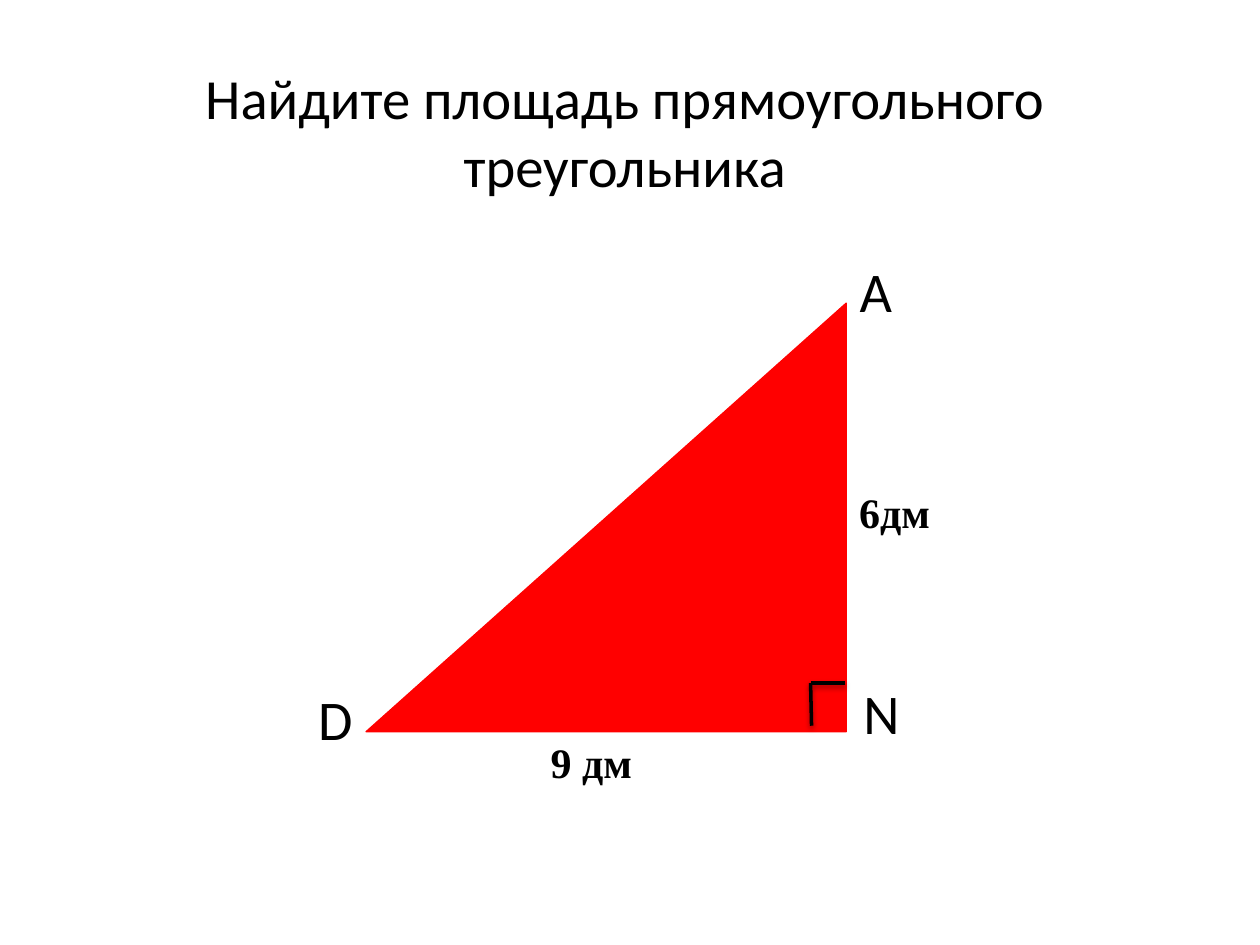
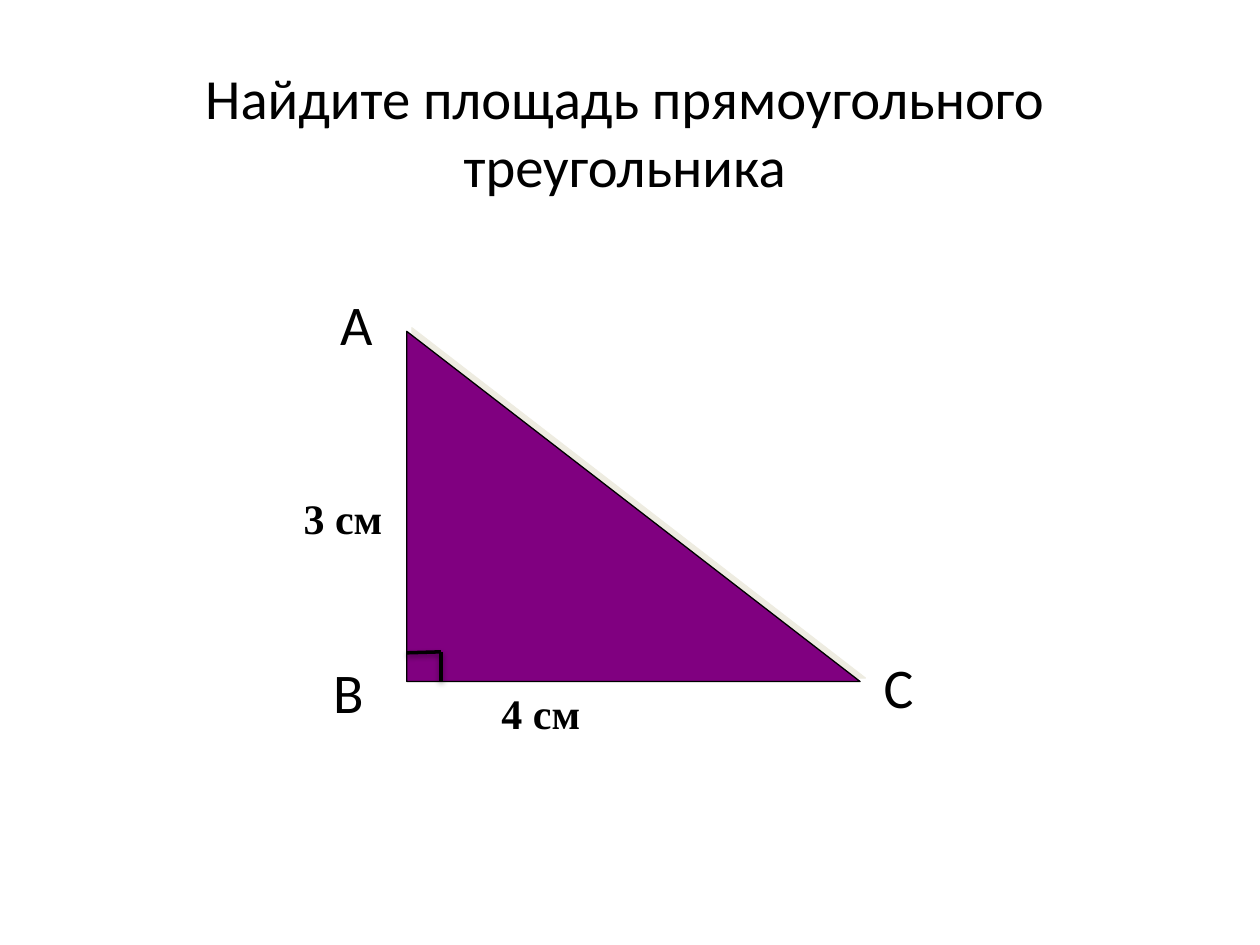
import itertools

import pptx
import pptx.dml.color
import pptx.enum.shapes
import pptx.enum.text
import pptx.oxml
import pptx.oxml.ns
import pptx.util

Cm = pptx.util.Cm
Pt = pptx.util.Pt
PP_ALIGN = pptx.enum.text.PP_ALIGN
AUTO_SIZE = pptx.enum.text.MSO_AUTO_SIZE

COLORS = {
    "ink": "000000",
    "red": "FF0000",
    "purple": "800080",
    "cream": "EEECE1",
}
VERTEX_FONT = "Calibri"
LENGTH_FONT = "Times New Roman"
TITLE_ONLY = 5
TASK = "Найдите площадь прямоугольного треугольника"


def rgb(name):
    return pptx.dml.color.RGBColor.from_string(COLORS[name])


def format_text(frame, font_name, size, align, bold=False):
    for paragraph in frame.paragraphs:
        paragraph.alignment = align
        for run in paragraph.runs:
            run.font.name = font_name
            run.font.size = Pt(size)
            run.font.bold = bold
            run.font.color.rgb = rgb("ink")


def add_shadow(shape, color, opacity, blur, distance, angle):
    """Give the shape an outer shadow: opacity in percent, blur and distance in points."""
    properties = shape._element.spPr
    for effects in properties.findall(pptx.oxml.ns.qn("a:effectLst")):
        properties.remove(effects)
    properties.append(pptx.oxml.parse_xml(
        f'<a:effectLst {pptx.oxml.ns.nsdecls("a")}>'
        f'<a:outerShdw blurRad="{Pt(blur)}" dist="{Pt(distance)}" '
        f'dir="{angle * 60000}" algn="ctr" rotWithShape="0">'
        f'<a:srgbClr val="{COLORS[color]}"><a:alpha val="{opacity * 1000}"/></a:srgbClr>'
        f'</a:outerShdw></a:effectLst>'))


def add_task_slide(deck):
    """Add a slide titled with the task and return the group that holds its figure."""
    slide = deck.slides.add_slide(deck.slide_layouts[TITLE_ONLY])
    title = slide.shapes.title
    title.left, title.top, title.width, title.height = Cm(1.9), Cm(1.17), Cm(21.39), Cm(2.95)
    frame = title.text_frame
    frame.text = TASK
    frame.word_wrap = True
    frame.auto_size = AUTO_SIZE.NONE
    frame.vertical_anchor = pptx.enum.text.MSO_ANCHOR.MIDDLE
    format_text(frame, VERTEX_FONT, 32.4, PP_ALIGN.CENTER)
    return slide.shapes.add_group_shape()


def add_triangle(figure, box, fill, outline, rotation=0):
    triangle = figure.shapes.add_shape(
        pptx.enum.shapes.MSO_SHAPE.RIGHT_TRIANGLE, *map(Cm, box))
    triangle.rotation = rotation
    triangle.shadow.inherit = False
    triangle.fill.solid()
    triangle.fill.fore_color.rgb = rgb(fill)
    triangle.line.color.rgb = rgb(outline)
    triangle.line.width = Pt(0.75)
    return triangle


def add_label(figure, text, box, wrap):
    frame = figure.shapes.add_textbox(*map(Cm, box)).text_frame
    frame.text = text
    frame.word_wrap = wrap
    frame.auto_size = AUTO_SIZE.SHAPE_TO_FIT_TEXT
    return frame


def add_side_length(figure, text, *box):
    frame = add_label(figure, text, box, wrap=True)
    format_text(frame, LENGTH_FONT, 24, PP_ALIGN.LEFT, bold=True)


def add_vertex(figure, letter, *box):
    frame = add_label(figure, letter, box, wrap=False)
    format_text(frame, VERTEX_FONT, 32, PP_ALIGN.CENTER)


def add_right_angle_mark(figure, *corners):
    for start, end in itertools.pairwise(corners):
        stroke = figure.shapes.add_connector(
            pptx.enum.shapes.MSO_CONNECTOR.STRAIGHT, *map(Cm, start + end))
        stroke.line.color.rgb = rgb("ink")
        stroke.line.width = Pt(2)
        add_shadow(stroke, "ink", opacity=38, blur=3.1, distance=1.6, angle=90)


def add_triangle_dna(deck):
    figure = add_task_slide(deck)
    add_triangle(figure, (7.9, 5.59, 8.64, 9.68), "red", "red", rotation=270)
    add_side_length(figure, "9 дм", 10.85, 14.73, 4.72, 1.27)
    add_side_length(figure, "6дм", 17.07, 9.68, 2.24, 1.27)
    add_right_angle_mark(figure, (17.04, 13.77), (16.34, 13.77), (16.36, 14.63))
    add_vertex(figure, "D", 6.15, 13.67, 1.22, 1.63)
    add_vertex(figure, "N", 17.15, 13.56, 1.24, 1.63)
    add_vertex(figure, "A", 17.07, 5.05, 1.17, 1.63)


def add_triangle_abc(deck):
    figure = add_task_slide(deck)
    triangle = add_triangle(figure, (8.2, 6.68, 9.14, 7.06), "purple", "ink")
    add_shadow(triangle, "cream", opacity=100, blur=0, distance=3.6, angle=326)
    add_side_length(figure, "3 см", 5.87, 9.8, 3, 1.57)
    add_side_length(figure, "4 см", 9.86, 13.74, 4.98, 1.37)
    add_vertex(figure, "A", 5.79, 5.72, 2.79, 1.73)
    add_vertex(figure, "B", 5.74, 13.13, 2.57, 1.73)
    add_vertex(figure, "C", 16.87, 13.03, 2.49, 1.73)
    add_right_angle_mark(figure, (8.2, 13.16), (8.89, 13.14), (8.89, 13.72))


def main():
    deck = pptx.Presentation()
    deck.slide_width, deck.slide_height = Cm(25.4), Cm(19.05)
    add_triangle_dna(deck)
    add_triangle_abc(deck)
    deck.save("out.pptx")


if __name__ == "__main__":
    main()
